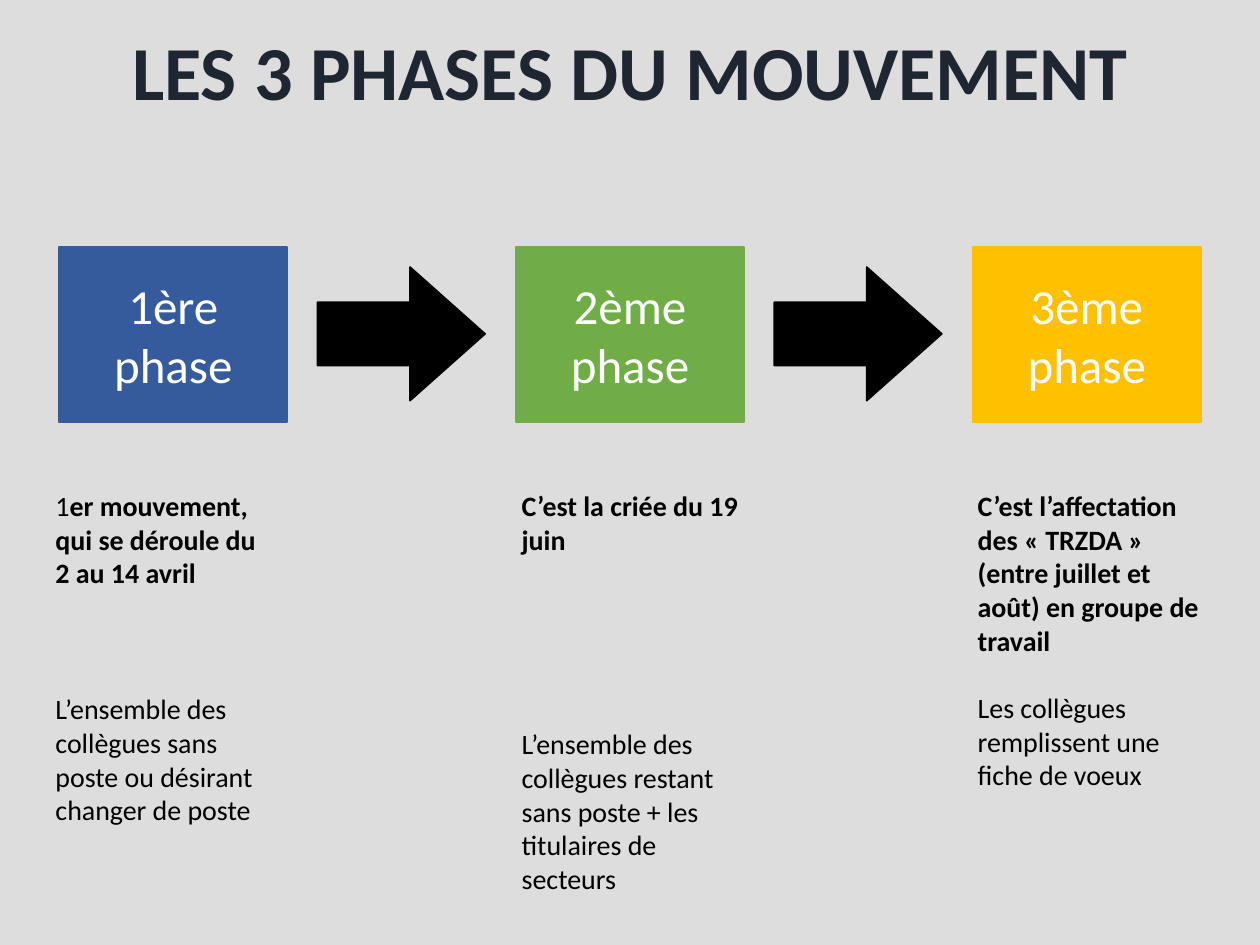
from dataclasses import dataclass

from pptx import Presentation
from pptx.dml.color import RGBColor
from pptx.enum.shapes import MSO_SHAPE
from pptx.enum.text import MSO_ANCHOR, MSO_AUTO_SIZE, PP_ALIGN
from pptx.util import Inches, Pt


@dataclass(frozen=True)
class Theme:
    font: str = "Calibri"
    back: str = "DDDDDD"
    title: str = "1E2631"
    ink: str = "000000"
    white: str = "FFFFFF"
    blue: str = "365B9D"
    green: str = "70AD47"
    gold: str = "FFC000"
    title_size: float = 43.6
    phase_size: float = 28
    note_size: float = 16
    note_line: float = 19.53


class Deck:
    def __init__(self, theme):
        self.theme = theme
        self.show = Presentation()
        self.show.slide_width, self.show.slide_height = Inches(10), Inches(7.5)
        self.slide = self.show.slides.add_slide(self.show.slide_layouts[5])
        fill = self.slide.background.fill
        fill.solid()
        fill.fore_color.rgb = RGBColor.from_string(theme.back)

    def style(self, run, size, color, bold=False):
        font = run.font
        font.name, font.size, font.bold = self.theme.font, Pt(size), bold
        font.color.rgb = RGBColor.from_string(color)

    def frame(self, shape, anchor):
        frame = shape.text_frame
        frame.word_wrap = True
        frame.vertical_anchor = anchor
        frame.margin_left = frame.margin_right = Inches(0.05)
        frame.margin_top = frame.margin_bottom = Inches(0.05)
        return frame

    def title(self, text, left, top, width, height):
        shape = self.slide.shapes.title
        shape.left, shape.top = Inches(left), Inches(top)
        shape.width, shape.height = Inches(width), Inches(height)
        frame = self.frame(shape, MSO_ANCHOR.BOTTOM)
        frame.auto_size = MSO_AUTO_SIZE.NONE
        frame.text = text
        line = frame.paragraphs[0]
        line.alignment, line.line_spacing = PP_ALIGN.CENTER, 0.9
        self.style(line.runs[0], self.theme.title_size, self.theme.title, True)

    def shape(self, kind, color, left, top, width, height):
        shape = self.slide.shapes.add_shape(
            kind, Inches(left), Inches(top), Inches(width), Inches(height))
        shape.shadow.inherit = False
        shape.fill.solid()
        shape.fill.fore_color.rgb = RGBColor.from_string(color)
        shape.line.color.rgb = RGBColor.from_string(color)
        shape.line.width = Pt(1)
        return shape

    def phase(self, text, color, left, top, width, height):
        box = self.shape(MSO_SHAPE.RECTANGLE, color, left, top, width, height)
        frame = self.frame(box, MSO_ANCHOR.MIDDLE)
        frame.text = text
        line = frame.paragraphs[0]
        line.alignment = PP_ALIGN.CENTER
        self.style(line.runs[0], self.theme.phase_size, self.theme.white)

    def arrow(self, left, top, width, height):
        arrow = self.shape(MSO_SHAPE.RIGHT_ARROW, self.theme.ink,
                           left, top, width, height)
        arrow.adjustments[0], arrow.adjustments[1] = 0.473, 0.562

    def note(self, head, body, gap, left, top, width, height):
        """Write head, a list of (text, bold) parts, then body gap lines below."""
        theme = self.theme
        box = self.slide.shapes.add_textbox(
            Inches(left), Inches(top), Inches(width), Inches(height))
        frame = self.frame(box, MSO_ANCHOR.TOP)
        frame.auto_size = MSO_AUTO_SIZE.SHAPE_TO_FIT_TEXT
        first, second = frame.paragraphs[0], frame.add_paragraph()
        for text, bold in head:
            run = first.add_run()
            run.text = text
            self.style(run, theme.note_size, theme.ink, bold)
        second.text = body
        second.space_before = Pt(round(gap * theme.note_line, 1))
        self.style(second.runs[0], theme.note_size, theme.ink)


def main():
    theme = Theme()
    deck = Deck(theme)
    deck.title("LES 3 PHASES DU MOUVEMENT", 0.63, 0.16, 8.74, 0.82)

    start, step = 0.47, 3.625
    phases = [("1ère phase", theme.blue), ("2ème phase", theme.green),
              ("3ème phase", theme.gold)]
    for i, (text, color) in enumerate(phases):
        left = start + i * step
        deck.phase(text, color, left, 1.96, 1.81, 1.39)
        if i < len(phases) - 1:
            deck.arrow(left + 2.05, 2.12, 1.33, 1.06)

    notes = [
        ([("1", False), ("er mouvement, qui se déroule du 2 au 14 avril", True)],
         "L’ensemble des collègues sans poste ou désirant changer de poste",
         3, 0.39, 1.82, 3),
        ([("C’est la criée du 19 juin", True)],
         "L’ensemble des collègues restant sans poste + les titulaires de secteurs",
         5, 4.09, 1.82, 3.33),
        ([("C’est l’affectation des « TRZDA » (entre juillet et août) "
           "en groupe de travail", True)],
         "Les collègues remplissent une fiche de voeux",
         1, 7.71, 1.93, 2.74),
    ]
    for head, body, gap, left, width, height in notes:
        deck.note(head, body, gap, left, 3.83, width, height)

    deck.show.save("out.pptx")


if __name__ == "__main__":
    main()
